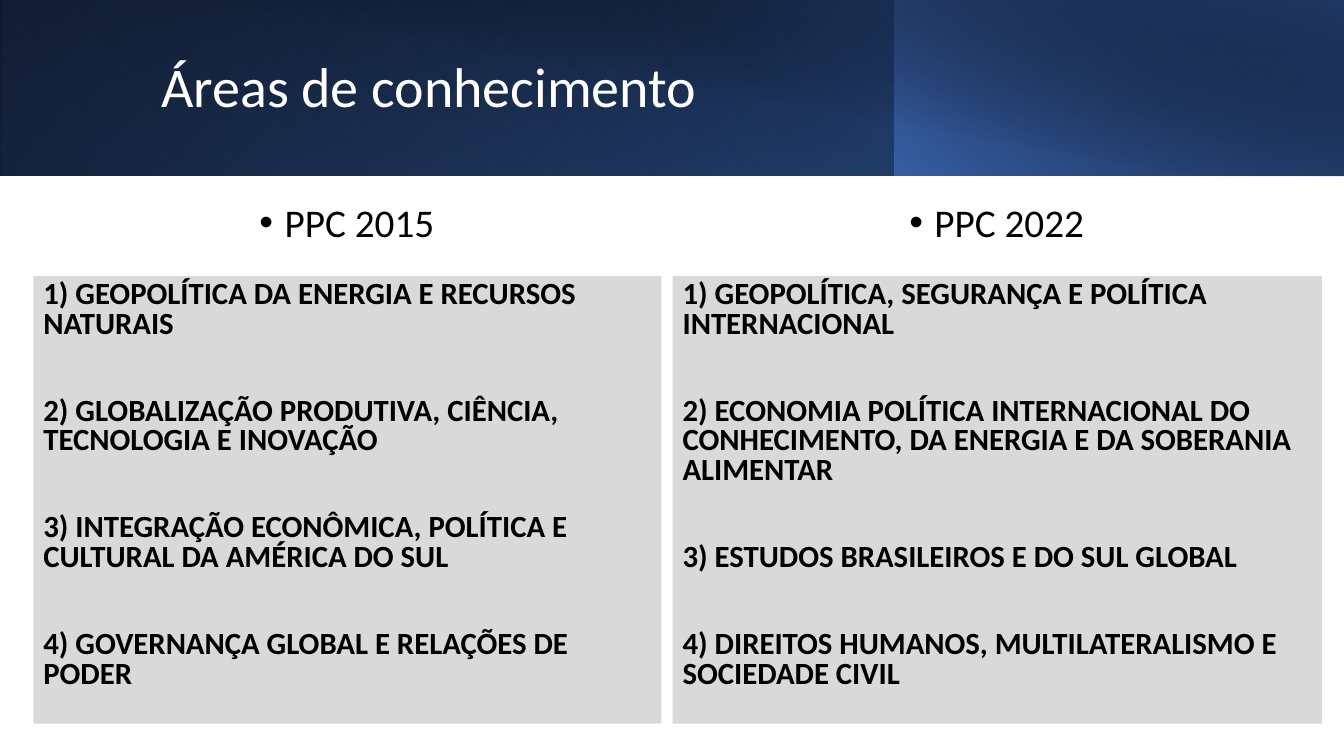
from dataclasses import dataclass

import lxml.etree
import pptx
import pptx.dml.color
import pptx.enum.shapes
import pptx.enum.text
import pptx.oxml.ns
import pptx.util

Inches = pptx.util.Inches
Pt = pptx.util.Pt
Align = pptx.enum.text.PP_ALIGN
Anchor = pptx.enum.text.MSO_ANCHOR
qn = pptx.oxml.ns.qn


@dataclass
class Stop:
    pos: int
    color: str
    alpha: int = 100


@dataclass
class Band:
    left: float
    width: float
    height: float
    angle: int
    stops: list[Stop]
    flip: bool = True
    turn: int = 0


@dataclass
class Column:
    head: str
    head_box: tuple[float, float, float, float]
    list_box: tuple[float, float, float, float]
    items: list[str]


BANDS = [
    Band(0, 13.33, 1.74, 140, [Stop(0, "000000"), Stop(100, "2F5597")]),
    Band(0, 8.88, 1.74, 230,
         [Stop(20, "4472C4", 0), Stop(100, "203864", 55)], turn=180),
    Band(8.87, 4.46, 1.74, 220,
         [Stop(0, "4472C4", 66), Stop(100, "000000", 30)]),
    Band(0.5, 12.83, 1.75, 280,
         [Stop(50, "000000", 0), Stop(99, "203864", 52)], flip=False),
]

COLUMNS = [
    Column("PPC 2015", (0.62, 1.97, 5.64, 0.9), (0.33, 2.74, 6.23, 4.44), [
        "1) GEOPOLÍTICA DA ENERGIA E RECURSOS NATURAIS",
        "2) GLOBALIZAÇÃO PRODUTIVA, CIÊNCIA, TECNOLOGIA E INOVAÇÃO",
        "3) INTEGRAÇÃO ECONÔMICA, POLÍTICA E CULTURAL DA AMÉRICA DO SUL",
        "4) GOVERNANÇA GLOBAL E RELAÇÕES DE PODER",
    ]),
    Column("PPC 2022", (7.05, 1.97, 5.67, 0.9), (6.67, 2.74, 6.44, 4.44), [
        "1) GEOPOLÍTICA, SEGURANÇA E POLÍTICA INTERNACIONAL",
        "2) ECONOMIA POLÍTICA INTERNACIONAL DO CONHECIMENTO, "
        "DA ENERGIA E DA SOBERANIA ALIMENTAR",
        "3) ESTUDOS BRASILEIROS E DO SUL GLOBAL",
        "4) DIREITOS HUMANOS, MULTILATERALISMO E SOCIEDADE CIVIL",
    ]),
]

TITLE_FONT = {"name": "Calibri", "size": Pt(40), "bold": False}
HEAD_FONT = {"name": "Calibri", "size": Pt(28), "bold": False}
ITEM_FONT = {"name": "Calibri", "size": Pt(22), "bold": True}
TITLE_PARA = {"alignment": Align.LEFT, "line_spacing": 0.9}
HEAD_PARA = {"alignment": Align.CENTER, "line_spacing": 0.9}
ITEM_PARA = {"alignment": Align.LEFT, "line_spacing": 0.8}
ITEM_GAP = 41


def paint(target, color: str) -> None:
    """Set the colour of a font or a solid fill."""
    if hasattr(target, "solid"):
        target.solid()
        target = target.fore_color
    else:
        target = target.color
    target.rgb = pptx.dml.color.RGBColor.from_string(color)


def apply(target, values: dict) -> None:
    for name, value in values.items():
        setattr(target, name, value)


def place(shape, box: tuple[float, float, float, float]) -> None:
    sides = ("left", "top", "width", "height")
    apply(shape, dict(zip(sides, map(Inches, box))))


def write(shape, lines: list[str], font: dict, para: dict, color: str,
          anchor: Anchor, gap: int = 0) -> None:
    """Fill a placeholder with paragraphs, with a gap between them."""
    frame = shape.text_frame
    apply(frame, {"word_wrap": True, "vertical_anchor": anchor,
                  "auto_size": pptx.enum.text.MSO_AUTO_SIZE.NONE})
    frame.text = "\n".join(lines)
    for i, line in enumerate(frame.paragraphs):
        apply(line, para | {"space_before": Pt(gap if i else 0)})
        apply(line.runs[0].font, font)
        paint(line.runs[0].font, color)


def mark(shape, char: str = "", indent: float = 0) -> None:
    """Set the bullet and hanging indent of every paragraph."""
    for line in shape.text_frame.paragraphs:
        props = line._p.get_or_add_pPr()
        props.set("marL", str(Inches(indent)))
        props.set("indent", str(-Inches(indent)))
        if char:
            lxml.etree.SubElement(props, qn("a:buFont"), typeface="Arial")
            lxml.etree.SubElement(props, qn("a:buChar"), char=char)
        else:
            lxml.etree.SubElement(props, qn("a:buNone"))


def shade(shape, band: Band) -> None:
    """Give a shape a linear gradient with transparent stops."""
    grad = lxml.etree.Element(qn("a:gradFill"), rotWithShape="1")
    stops = lxml.etree.SubElement(grad, qn("a:gsLst"))
    for stop in band.stops:
        node = lxml.etree.SubElement(stops, qn("a:gs"), pos=str(stop.pos * 1000))
        tone = lxml.etree.SubElement(node, qn("a:srgbClr"), val=stop.color)
        if stop.alpha < 100:
            lxml.etree.SubElement(tone, qn("a:alpha"), val=str(stop.alpha * 1000))
    lxml.etree.SubElement(grad, qn("a:lin"), ang=str(band.angle * 60000), scaled="0")
    shape._element.spPr.find(qn("a:prstGeom")).addnext(grad)


def draw_band(slide, band: Band, depth: int) -> None:
    shape = slide.shapes.add_shape(
        pptx.enum.shapes.MSO_SHAPE.RECTANGLE, Inches(band.left), 0,
        Inches(band.width), Inches(band.height))
    shape.shadow.inherit = False
    shape.line.fill.background()
    shape.rotation = band.turn
    if band.flip:
        shape._element.spPr.find(qn("a:xfrm")).set("flipH", "1")
    shade(shape, band)
    slide.shapes._spTree.insert(2 + depth, shape._element)


def draw_column(head, body, column: Column) -> None:
    place(head, column.head_box)
    write(head, [column.head], HEAD_FONT, HEAD_PARA, "000000", Anchor.TOP)
    mark(head, "•", 0.25)
    place(body, column.list_box)
    paint(body.fill, "D9D9D9")
    write(body, column.items, ITEM_FONT, ITEM_PARA, "000000", Anchor.TOP, ITEM_GAP)
    mark(body)


def main() -> None:
    deck = pptx.Presentation()
    deck.slide_width, deck.slide_height = Inches(13.33), Inches(7.5)
    slide = deck.slides.add_slide(deck.slide_layouts.get_by_name("Comparison"))
    title, *slots = slide.placeholders
    place(title, (1.5, 0.32, 10.82, 1.13))
    write(title, ["Áreas de conhecimento"], TITLE_FONT, TITLE_PARA,
          "FFFFFF", Anchor.MIDDLE)
    for head, body, column in zip(slots[::2], slots[1::2], COLUMNS):
        draw_column(head, body, column)
    for depth, band in enumerate(BANDS):
        draw_band(slide, band, depth)
    deck.save("out.pptx")


if __name__ == "__main__":
    main()
